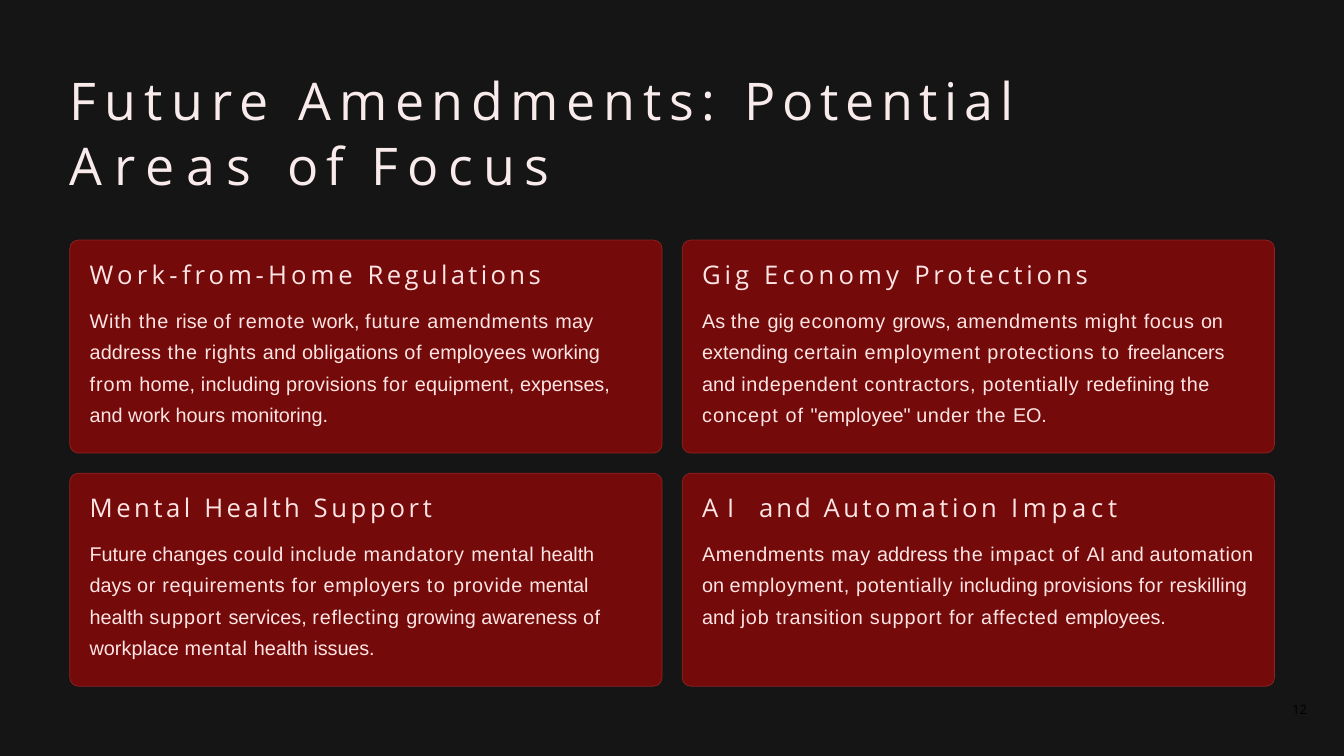
from pptx import Presentation
from pptx.dml.color import RGBColor
from pptx.enum.shapes import MSO_SHAPE
from pptx.enum.text import MSO_ANCHOR, MSO_AUTO_SIZE, PP_ALIGN
from pptx.util import Cm, Pt

ROUNDED = MSO_SHAPE.ROUNDED_RECTANGLE
LEFT = PP_ALIGN.LEFT
TOP = MSO_ANCHOR.TOP
NO_AUTOFIT = MSO_AUTO_SIZE.NONE

BACKGROUND = RGBColor(0x15, 0x15, 0x15)
CARD_FILL = RGBColor(0x74, 0x0A, 0x0A)
CARD_EDGE = RGBColor(0x8D, 0x23, 0x23)
TITLE_COLOUR = RGBColor(0xF9, 0xEB, 0xEB)
TEXT_COLOUR = RGBColor(0xFF, 0xE4, 0xE4)
BLACK = RGBColor(0, 0, 0)

TITLE_FONT = {"name": "Open Sans", "size": Pt(44.5), "bold": False}
HEADING_FONT = {"name": "Open Sans", "size": Pt(22)}
BODY_FONT = {"name": "Arial", "size": Pt(17)}
NUMBER_FONT = {"name": "Open Sans", "size": Pt(11)}

TITLE_PARA = {"alignment": LEFT, "line_spacing": Pt(56), "space_before": Pt(0)}
HEADING_PARA = {"alignment": LEFT, "space_before": Pt(0.9)}
BODY_PARA = {"alignment": LEFT, "line_spacing": 1.32, "space_before": Pt(9.6)}
NUMBER_PARA = {"alignment": LEFT}

CARD_LEFT, CARD_TOP = 2.11, 7.26
CARD_WIDTH, CARD_HEIGHT = 17.91, 6.44
COLUMN_STEP, ROW_STEP = 18.52, 7.05
TEXT_INSET = 0.57

# Each span is its text and its letter spacing in points.
TITLE = [("Future ", 7), ("Amendments: ", 6.6), ("Potential ", 5.7),
         ("Areas ", 9.8), ("of ", 6), ("Focus", 8.4)]

# Each card is its text width and height, its heading and its body.
CARDS = [
    (16.05, 5.16,
     [("Work-", 3.7), ("from-", 3.4), ("Home ", 3.5), ("Regulations", 2.9)],
     [("With ", 0.7), ("the ", 0.8), ("rise ", 0), ("of remote ", 0.8),
      ("work, ", 0), ("future ", 0.7), ("amendments ", 0.6), ("may ", 0.2),
      ("address", 0.1), (" the ", 0.8), ("rights ", 0.5),
      ("and obligations ", 0.1), ("of ", 0.8), ("employees ", 0.1),
      ("working ", -0.1), ("from ", 0.8), ("home, including provisions ", 0.1),
      ("for ", 0.7), ("equipment, ", 0.1), ("expenses, ", -0.1),
      ("and work hours ", 0), ("monitoring.", -0.1)]),
    (16.05, 5.16,
     [("Gig ", 3.5), ("Economy ", 3.6), ("Protections", 3.3)],
     [("As ", 0), ("the ", 0.8), ("gig ", 0), ("economy ", 0.7),
      ("grows, ", 0), ("amendments ", 0.6), ("might ", 0.7), ("focus ", 0.6),
      ("on ", -0.2), ("extending ", 0), ("certain ", 0.6),
      ("employment ", 0.7), ("protections ", 0.8), ("to ", 1.2),
      ("freelancers ", -0.1), ("and ", 0.1),
      ("independent contractors, potentially ", 0.6), ("redefining ", 0.1),
      ("the ", 0.5), ("concept ", 0.9), ("of ", 0.8), ('"employee" ', 0),
      ("under ", 0.5), ("the ", 0.8), ("EO.", -0.2)]),
    (15.72, 5.16,
     [("Mental ", 3.1), ("Health ", 2.9), ("Support", 3.2)],
     [("Future changes ", 0), ("could", 0.6), (" include ", 0.5),
      ("mandatory ", 0.7), ("mental ", 0.5), ("health ", -0.1), ("days ", 0),
      ("or ", 0.6), ("requirements ", 0.5), ("for ", 0.7),
      ("employers ", 0.5), ("to ", 1.2), ("provide ", 0.6),
      ("mental ", -0.1), ("health ", 0), ("support ", 0.8),
      ("services, ", 0), ("reflecting ", 0.6), ("growing awareness ", 0),
      ("of ", 0.5), ("workplace ", 0), ("mental ", 0.5), ("health ", 0),
      ("issues.", -0.1)]),
    (16.74, 4.19,
     [("AI ", 7.7), ("and ", 2.6), ("Automation ", 3.1), ("Impact", 4.1)],
     [("Amendments ", 0.5), ("may ", 0.6), ("address ", 0), ("the ", 0.8),
      ("impact ", 0.9), ("of ", 0.8), ("AI and ", 0), ("automation ", 0.5),
      ("on ", 0), ("employment, ", 0.5), ("potentially ", 0.6),
      ("including provisions ", 0), ("for ", 0.5), ("reskilling and ", 0),
      ("job ", 0.7), ("transition ", 0.6), ("support ", 0.8), ("for ", 0.7),
      ("affected ", 0.8), ("employees.", -0.1)]),
]


def set_values(target, values):
    for name, value in values.items():
        setattr(target, name, value)


def prepare_frame(frame):
    set_values(frame, {"word_wrap": True, "auto_size": NO_AUTOFIT,
                       "vertical_anchor": TOP, "margin_left": Cm(0.03),
                       "margin_top": 0, "margin_right": 0, "margin_bottom": 0})


def fill_para(para, spans, para_format, font_format, colour):
    set_values(para, para_format)
    for text, spacing in spans:
        span = para.add_run()
        span.text = text
        set_values(span.font, font_format)
        span.font.color.rgb = colour
        span._r.get_or_add_rPr().set("spc", str(round(spacing * 100)))


def add_text_box(page, left, top, width, height):
    box = page.shapes.add_textbox(Cm(left), Cm(top), Cm(width), Cm(height))
    prepare_frame(box.text_frame)
    return box.text_frame


def add_title(page):
    title = page.shapes.title
    set_values(title, {"left": Cm(2.08), "top": Cm(1.98),
                       "width": Cm(34.67), "height": Cm(3.94)})
    prepare_frame(title.text_frame)
    fill_para(title.text_frame.paragraphs[0], TITLE, TITLE_PARA, TITLE_FONT,
              TITLE_COLOUR)


def add_card(page, left, top, text_width, text_height, heading, body):
    card = page.shapes.add_shape(ROUNDED, Cm(left), Cm(top),
                                 Cm(CARD_WIDTH), Cm(CARD_HEIGHT))
    card.adjustments[0] = 0.04
    card.shadow.inherit = False
    card.fill.solid()
    card.fill.fore_color.rgb = CARD_FILL
    card.line.color.rgb = CARD_EDGE
    card.line.width = Pt(0.6)

    frame = add_text_box(page, left + TEXT_INSET, top + TEXT_INSET,
                         text_width, text_height)
    fill_para(frame.paragraphs[0], heading, HEADING_PARA, HEADING_FONT,
              TEXT_COLOUR)
    fill_para(frame.add_paragraph(), body, BODY_PARA, BODY_FONT, TEXT_COLOUR)


def main():
    deck = Presentation()
    deck.slide_width, deck.slide_height = Cm(40.64), Cm(22.86)
    page = deck.slides.add_slide(deck.slide_layouts[5])
    page.background.fill.solid()
    page.background.fill.fore_color.rgb = BACKGROUND

    add_title(page)
    for index, card in enumerate(CARDS):
        row, column = divmod(index, 2)
        add_card(page, CARD_LEFT + column * COLUMN_STEP,
                 CARD_TOP + row * ROW_STEP, *card)
    number = add_text_box(page, 39.05, 21.23, 1.2, 0.55)
    fill_para(number.paragraphs[0], [("12", 0)], NUMBER_PARA, NUMBER_FONT,
              BLACK)

    deck.save("out.pptx")


if __name__ == "__main__":
    main()
